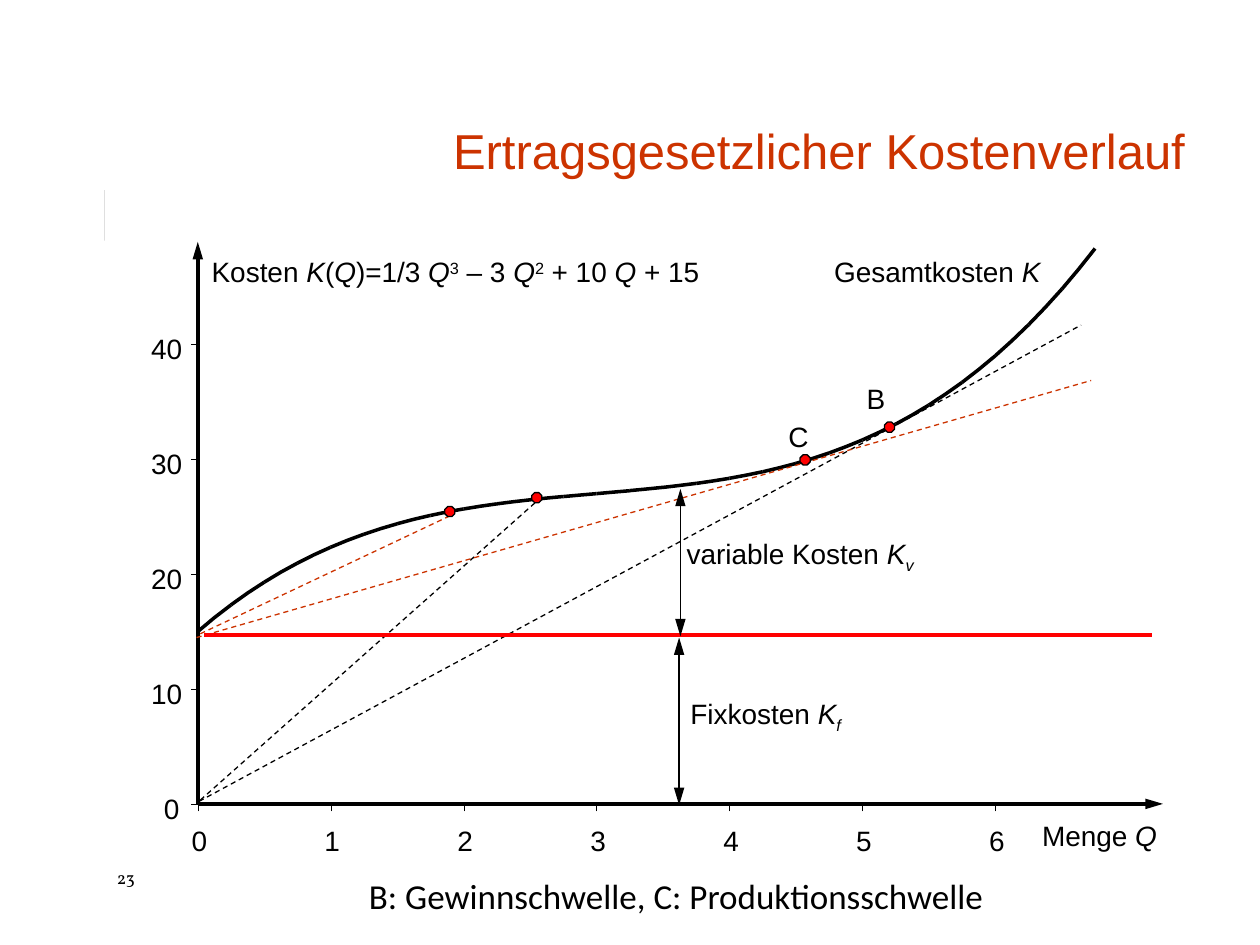
from lxml import etree
from pptx import Presentation
from pptx.dml.color import RGBColor
from pptx.enum.dml import MSO_LINE
from pptx.enum.shapes import MSO_CONNECTOR, MSO_SHAPE
from pptx.enum.text import MSO_ANCHOR, PP_ALIGN
from pptx.oxml.ns import qn
from pptx.util import Inches, Pt

BLACK = RGBColor(0x00, 0x00, 0x00)
RED = RGBColor(0xFF, 0x00, 0x00)
RUST = RGBColor(0xCC, 0x33, 0x00)
STRAIGHT = MSO_CONNECTOR.STRAIGHT
DASH = MSO_LINE.DASH
RECTANGLE, OCTAGON = MSO_SHAPE.RECTANGLE, MSO_SHAPE.OCTAGON
LEFT, RIGHT = PP_ALIGN.LEFT, PP_ALIGN.RIGHT
TOP, BOTTOM = MSO_ANCHOR.TOP, MSO_ANCHOR.BOTTOM

ORIGIN_X, ORIGIN_Y = 1.57, 6.38
QUANTITY_STEP = 1.055   # inches per unit of Q
COST_STEP = 0.0912      # inches per unit of cost
MARKER_SIZE = 0.08
HAIRLINE = 0.1
BASELINES = {"sup": "30000", "sub": "-25000"}


def total_cost(quantity):
    return quantity ** 3 / 3 - 3 * quantity ** 2 + 10 * quantity + 15


def chart_point(quantity, cost):
    """Position on the slide, in inches, of a point of the diagram."""
    return ORIGIN_X + quantity * QUANTITY_STEP, ORIGIN_Y - cost * COST_STEP


def add_line(slide, start, end, color=BLACK, width=0.75, dash=None, arrows=()):
    """Straight line; arrows holds "headEnd" and/or "tailEnd"."""
    line = slide.shapes.add_connector(
        STRAIGHT, *(Inches(length) for length in (*start, *end)))
    line.line.color.rgb = color
    line.line.width = Pt(width)
    if dash:
        line.line.dash_style = dash
    properties = line._element.spPr
    for arrow in arrows:
        etree.SubElement(properties.find(qn("a:ln")), qn(f"a:{arrow}"),
                         type="triangle", w="med", len="lg")
    etree.SubElement(properties, qn("a:effectLst"))


def add_text(slide, box, runs, size=16, font="Arial", color=BLACK,
             inset=(0, 0), wrap=False, align=LEFT, anchor=TOP):
    """Text box; runs are (text, style), style made of "i", "sup" and "sub"."""
    frame = slide.shapes.add_textbox(*(Inches(length) for length in box)).text_frame
    side, edge = (Inches(length) for length in inset)
    frame_format = {"word_wrap": wrap, "vertical_anchor": anchor,
                    "margin_left": side, "margin_right": side,
                    "margin_top": edge, "margin_bottom": edge}
    for name, value in frame_format.items():
        setattr(frame, name, value)
    paragraph = frame.paragraphs[0]
    paragraph.alignment = align
    for text, style in runs:
        run = paragraph.add_run()
        run.text = text
        run_format = {"size": Pt(size), "name": font, "italic": "i" in style.split()}
        for name, value in run_format.items():
            setattr(run.font, name, value)
        run.font.color.rgb = color
        for name, baseline in BASELINES.items():
            if name in style.split():
                run.font._element.set("baseline", baseline)


def add_marker(slide, center):
    x, y = (Inches(length - MARKER_SIZE / 2) for length in center)
    marker = slide.shapes.add_shape(OCTAGON, x, y, Inches(MARKER_SIZE), Inches(MARKER_SIZE))
    marker.shadow.inherit = False
    marker.fill.solid()
    marker.fill.fore_color.rgb = RED
    marker.line.color.rgb = BLACK
    marker.line.width = Pt(0.75)


def add_side_rule(slide):
    rule = slide.shapes.add_shape(RECTANGLE, Inches(0.83), Inches(1.51), Inches(0), Inches(0.4))
    rule.shadow.inherit = False
    rule.fill.solid()
    rule.fill.fore_color.rgb = BLACK
    rule.line.fill.background()


def add_cost_curve(slide):
    """Total cost up to Q = 6.75, in sections a quarter of a unit wide."""
    points = [tuple(Inches(length) for length in chart_point(step / 8, total_cost(step / 8)))
              for step in range(55)]
    for first in range(0, 54, 2):
        builder = slide.shapes.build_freeform(*points[first])
        builder.add_line_segments(points[first + 1:first + 3], close=False)
        section = builder.convert_to_shape()
        section.shadow.inherit = False
        section.fill.background()
        section.line.color.rgb = BLACK
        section.line.width = Pt(2)


def add_axes(slide):
    for cost in range(0, 50, 10):
        x, y = chart_point(0, cost)
        add_line(slide, (x - 0.05, y), (x, y), width=HAIRLINE)
        label_left, label_width = (1.2, 0.25) if cost else (1.3, 0.12)
        add_text(slide, (label_left, y - 0.1, label_width, 0.27), [(str(cost), "")])
    for quantity in range(7):
        x, y = chart_point(quantity, 0)
        add_line(slide, (x, y + 0.06), (x, y), width=HAIRLINE)
        add_text(slide, (x - 0.05, y + 0.16, 0.12, 0.27), [(str(quantity), "")])
    for end in ((ORIGIN_X, 1.92), (9.23, ORIGIN_Y)):
        add_line(slide, (ORIGIN_X, ORIGIN_Y), end, width=2, arrows=["tailEnd"])


def add_tangents(slide):
    tangents = [
        ((1.58, 6.36), (8.58, 2.58), (7.06, 3.39), BLACK),
        ((1.59, 6.35), (4.27, 3.97), (4.26, 3.95), BLACK),
        ((1.59, 5.03), (3.58, 4.09), (3.57, 4.06), RUST),
        ((1.56, 5.06), (8.66, 3.02), (6.39, 3.65), RUST),
    ]
    for start, end, contact, color in tangents:
        add_line(slide, start, end, color, dash=DASH)
        add_marker(slide, contact)


def add_cost_shares(slide):
    """Fixed cost level and the arrows for fixed and variable cost."""
    add_line(slide, (1.62, 5.04), (9.14, 5.04), RED, width=2)
    for start, end in (((5.39, 5.06), (5.39, 6.39)), ((5.4, 3.88), (5.4, 5.05))):
        add_line(slide, start, end, arrows=["headEnd", "tailEnd"])


def add_labels(slide):
    formula = [("Kosten ", ""), ("K", "i"), ("(", ""), ("Q", "i"), (")=1/3", ""),
               (" Q", "i"), ("3", "sup"), (" – 3 ", ""), ("Q", "i"), ("2", "sup"),
               (" + 10 ", ""), ("Q", "i"), (" + 15", "")]
    labels = [
        ((1.68, 2.02, 4.19, 0.27), formula),
        ((6.62, 2.02, 1.72, 0.27), [("Gesamtkosten ", ""), ("K", "i")]),
        ((8.27, 6.5, 0.98, 0.27), [("Menge ", ""), ("Q", "i")]),
        ((5.48, 5.53, 1.21, 0.27), [("Fixkosten ", ""), ("K", "i"), ("f", "i sub")]),
        ((5.45, 4.26, 1.83, 0.45), [("variable Kosten ", ""), ("K", "i"), ("v", "i sub")]),
    ]
    for box, runs in labels:
        add_text(slide, box, runs)
    for box, threshold in (((6.78, 2.98, 0.35, 0.37), "B"), ((6.16, 3.28, 0.36, 0.37), "C")):
        add_text(slide, box, [(threshold, "")], inset=(0.1, 0.05))


def main():
    presentation = Presentation()
    presentation.slide_width, presentation.slide_height = Inches(10), Inches(7.5)
    slide = presentation.slides.add_slide(presentation.slide_layouts[6])
    padded = {"inset": (0.1, 0.05), "wrap": True}
    add_text(slide, (0.83, 6.83, 0.67, 0.27), [("23", "")], 10, "Vollkorn", **padded)
    add_text(slide, (2.09, 0.42, 7.41, 1.05), [("Ertragsgesetzlicher Kostenverlauf", "")],
             28, color=RUST, align=RIGHT, anchor=BOTTOM, **padded)
    add_side_rule(slide)
    add_cost_curve(slide)
    add_axes(slide)
    add_tangents(slide)
    add_cost_shares(slide)
    add_labels(slide)
    add_text(slide, (2.83, 6.89, 7.93, 0.44),
             [("B: Gewinnschwelle, C: Produktionsschwelle", "")], 20, "Calibri", **padded)
    presentation.save("out.pptx")


if __name__ == "__main__":
    main()
